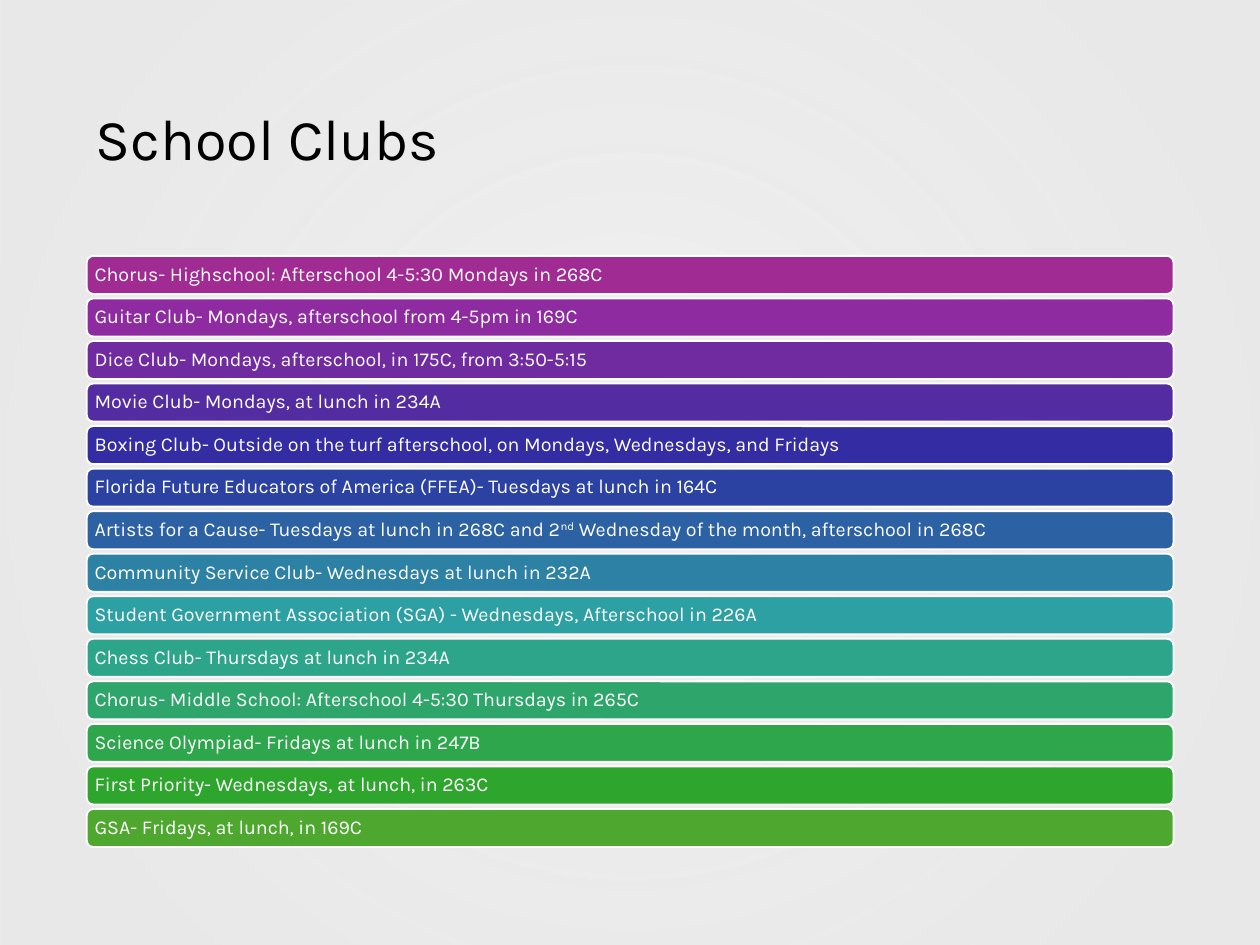
from lxml import etree
from pptx import Presentation
from pptx.dml.color import RGBColor
from pptx.enum import shapes, text
from pptx.oxml import ns
from pptx.util import Cm, Pt

FONT = "Karla"
BLACK = RGBColor(0, 0, 0)
WHITE = RGBColor(255, 255, 255)
GREY = RGBColor(0xE8, 0xE8, 0xE8)
HUES = [RGBColor.from_string(code) for code in (
    "A02B93", "8F2BA1", "712BA1", "532CA2", "342CA2", "2C42A3", "2C61A3",
    "2D81A4", "2DA0A4", "2DA58A", "2DA56B", "2EA64C", "2EA62E", "4EA72E")]
CLUBS = [
    ["Chorus- Highschool: Afterschool 4-5:30 Mondays in 268C"],
    ["Guitar Club- Mondays, afterschool from 4-5pm in 169C"],
    ["Dice Club- Mondays, afterschool, in 175C, from 3:50-5:15"],
    ["Movie Club- Mondays, at lunch in 234A"],
    ["Boxing Club- Outside on the turf afterschool, on Mondays, "
     "Wednesdays, and Fridays"],
    ["Florida Future Educators of America (FFEA)- Tuesdays at lunch in 164C"],
    ["Artists for a Cause- Tuesdays at lunch in 268C and 2", "nd",
     " Wednesday of the month, afterschool in 268C"],
    ["Community Service Club- Wednesdays at lunch in 232A"],
    ["Student Government Association (SGA) - Wednesdays, Afterschool in 226A"],
    ["Chess Club- Thursdays at lunch in 234A"],
    ["Chorus- Middle School: Afterschool 4-5:30 Thursdays in 265C"],
    ["Science Olympiad- Fridays at lunch in 247B"],
    ["First Priority- Wednesdays, at lunch, in 263C"],
    ["GSA- Fridays, at lunch, in 169C"],
]


def style(para, size, color):
    """Format a left-aligned paragraph."""
    para.alignment = text.PP_ALIGN.LEFT
    para.line_spacing = 0.9
    font = para.font
    font.name, font.size, font.color.rgb = FONT, Pt(size), color


def add_back(slide, left, top, width, height):
    """Lay a round, partly clear grey gradient behind everything in the box."""
    back = slide.shapes.add_shape(
        shapes.MSO_SHAPE.RECTANGLE, left, top, width, height)
    back.shadow.inherit = False
    back.line.fill.background()
    back.fill.gradient()
    for stop, place in zip(back.fill.gradient_stops, (0.1, 0.85)):
        stop.color.rgb, stop.position = GREY, place
    grad = back._element.spPr.find(ns.qn("a:gradFill"))
    for tint, alpha in zip(grad.iter(ns.qn("a:srgbClr")), ("68000", "97000")):
        etree.SubElement(tint, ns.qn("a:alpha"), val=alpha)
    grad.remove(grad.find(ns.qn("a:lin")))
    ring = etree.SubElement(grad, ns.qn("a:path"), path="circle")
    etree.SubElement(ring, ns.qn("a:fillToRect"),
                     dict.fromkeys("ltrb", "50000"))
    slide.shapes._spTree.insert(2, back._element)


def add_title(slide, left, top, width, height):
    """Place the slide title in the box."""
    title = slide.shapes.title
    title.left, title.top, title.width, title.height = left, top, width, height
    frame = title.text_frame
    frame.text = "School Clubs"
    frame.auto_size = text.MSO_AUTO_SIZE.NONE
    frame.vertical_anchor = text.MSO_ANCHOR.MIDDLE
    style(frame.paragraphs[0], 46.9, BLACK)


def add_bar(slide, parts, hue, left, top, width, height):
    """Draw one club bar, with every second part raised."""
    bar = slide.shapes.add_shape(
        shapes.MSO_SHAPE.ROUNDED_RECTANGLE, left, top, width, height)
    bar.shadow.inherit = False
    bar.fill.solid()
    bar.fill.fore_color.rgb = hue
    bar.line.color.rgb, bar.line.width = WHITE, Pt(1.5)
    frame = bar.text_frame
    frame.word_wrap = True
    frame.vertical_anchor = text.MSO_ANCHOR.MIDDLE
    frame.margin_left = frame.margin_right = Cm(0.17)
    frame.margin_top = frame.margin_bottom = Cm(0.1)
    para = frame.paragraphs[0]
    style(para, 16, WHITE)
    for spot, part in enumerate(parts):
        run = para.add_run()
        run.text = part
        if spot % 2:
            run._r.get_or_add_rPr().set("baseline", "30000")


def add_clubs(slide, left, top, width, height):
    """Stack the club bars at equal steps in the box."""
    gap = Cm(0.13)
    step = (height + gap) / len(CLUBS)
    for row, (parts, hue) in enumerate(zip(CLUBS, HUES)):
        add_bar(slide, parts, hue, left, int(top + row * step),
                width, int(step - gap))


def main():
    """Build and save the slide."""
    deck = Presentation()
    deck.slide_width, deck.slide_height = Cm(36.12), Cm(27.1)
    slide = deck.slides.add_slide(deck.slide_layouts[5])
    left, width = Cm(2.49), Cm(31.15)
    add_back(slide, 0, 0, deck.slide_width, deck.slide_height)
    add_title(slide, left, Cm(1.45), width, Cm(5.23))
    add_clubs(slide, left, Cm(7.34), width, Cm(16.95))
    deck.save("out.pptx")


if __name__ == "__main__":
    main()
